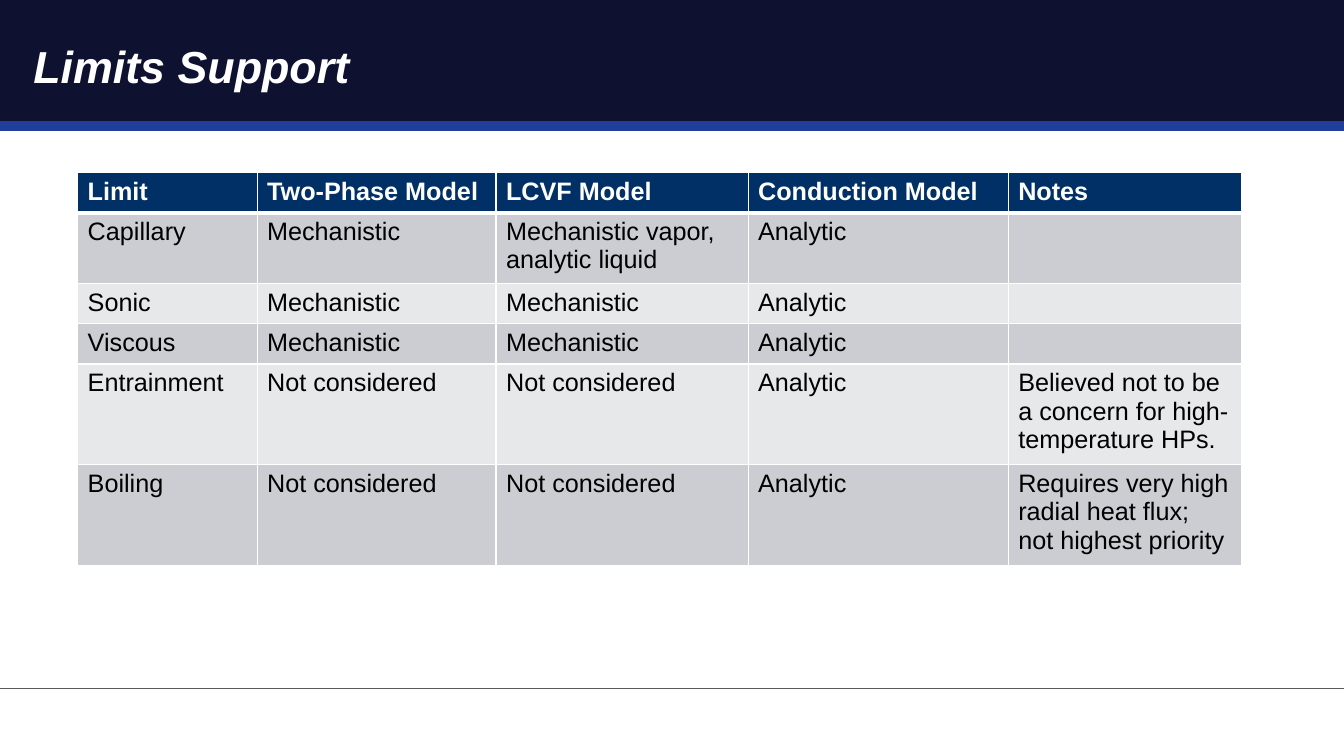
import lxml.etree
import pptx
import pptx.dml.color
import pptx.enum.shapes
import pptx.enum.text
import pptx.oxml.ns
import pptx.util

PX = 9144
COLORS = {
    "banner": "0E1130", "stripe": "213E9A", "footer": "595959",
    "header": "003066", "odd": "CCCDD3", "even": "E7E8EA",
    "white": "FFFFFF", "black": "000000",
}
LEFT, SPAN, BANNER_HEIGHT = -3, 1340, 125
COLUMN_WIDTHS = [178, 237, 250, 258, 231]
ROW_HEIGHT = 40
LIMITS = [
    ["Limit", "Two-Phase Model", "LCVF Model", "Conduction Model", "Notes"],
    ["Capillary", "Mechanistic", "Mechanistic vapor, analytic liquid", "Analytic", ""],
    ["Sonic", "Mechanistic", "Mechanistic", "Analytic", ""],
    ["Viscous", "Mechanistic", "Mechanistic", "Analytic", ""],
    ["Entrainment", "Not considered", "Not considered", "Analytic",
     "Believed not to be a concern for high-temperature HPs."],
    ["Boiling", "Not considered", "Not considered", "Analytic",
     "Requires very high radial heat flux; not highest priority"],
]


def rgb(name):
    return pptx.dml.color.RGBColor.from_string(COLORS[name])


def style_font(font, color, **formats):
    font.name = "Arial"
    font.color.rgb = rgb(color)
    for attribute, value in formats.items():
        setattr(font, attribute, value)


deck = pptx.Presentation()
deck.slide_width = 1333 * PX
deck.slide_height = 750 * PX
slide = deck.slides.add_slide(deck.slide_layouts[6])

banner = slide.shapes.add_shape(
    pptx.enum.shapes.MSO_SHAPE.RECTANGLE, LEFT * PX, 0, SPAN * PX, BANNER_HEIGHT * PX)
banner.shadow.inherit = False
banner.fill.solid()
banner.fill.fore_color.rgb = rgb("banner")
banner.line.fill.background()

for y, color, weight in [(BANNER_HEIGHT, "stripe", 6.75), (683, "footer", 1)]:
    rule = slide.shapes.add_connector(
        pptx.enum.shapes.MSO_CONNECTOR.STRAIGHT,
        LEFT * PX, y * PX, (LEFT + SPAN) * PX, y * PX)
    rule.line.color.rgb = rgb(color)
    rule.line.width = pptx.util.Pt(weight)
    lxml.etree.SubElement(rule._element.spPr, pptx.oxml.ns.qn("a:effectLst"))

title = slide.shapes.add_textbox(33 * PX, 33 * PX, 1278 * PX, 75 * PX).text_frame
title_format = {
    "word_wrap": True, "vertical_anchor": pptx.enum.text.MSO_ANCHOR.TOP,
    "margin_left": 0, "margin_right": 0, "margin_top": 5 * PX, "margin_bottom": 0,
}
for attribute, value in title_format.items():
    setattr(title, attribute, value)
title.text = "Limits Support"
style_font(title.paragraphs[0].runs[0].font, "white",
           size=pptx.util.Pt(32), bold=True, italic=True)

limits_table = slide.shapes.add_table(
    len(LIMITS), len(COLUMN_WIDTHS), 77 * PX, 171 * PX,
    sum(COLUMN_WIDTHS) * PX, len(LIMITS) * ROW_HEIGHT * PX).table
for column, width in zip(limits_table.columns, COLUMN_WIDTHS):
    column.width = width * PX

for row, entries in enumerate(LIMITS):
    is_header = row == 0
    band = "header" if is_header else "odd" if row % 2 else "even"
    borders = {"lnL": 1, "lnR": 1, "lnT": 3 if row == 1 else 1, "lnB": 3 if is_header else 1}
    for column, entry in enumerate(entries):
        cell = limits_table.cell(row, column)
        properties = cell._tc.get_or_add_tcPr()
        for side, weight in borders.items():
            border = lxml.etree.SubElement(
                properties, pptx.oxml.ns.qn(f"a:{side}"), w=str(pptx.util.Pt(weight)))
            border_fill = lxml.etree.SubElement(border, pptx.oxml.ns.qn("a:solidFill"))
            lxml.etree.SubElement(
                border_fill, pptx.oxml.ns.qn("a:srgbClr"), val=COLORS["white"])
        cell.fill.solid()
        cell.fill.fore_color.rgb = rgb(band)
        if entry:
            cell.text = entry
            style_font(cell.text_frame.paragraphs[0].runs[0].font,
                       "white" if is_header else "black",
                       size=pptx.util.Pt(18), bold=is_header)

deck.save("out.pptx")
